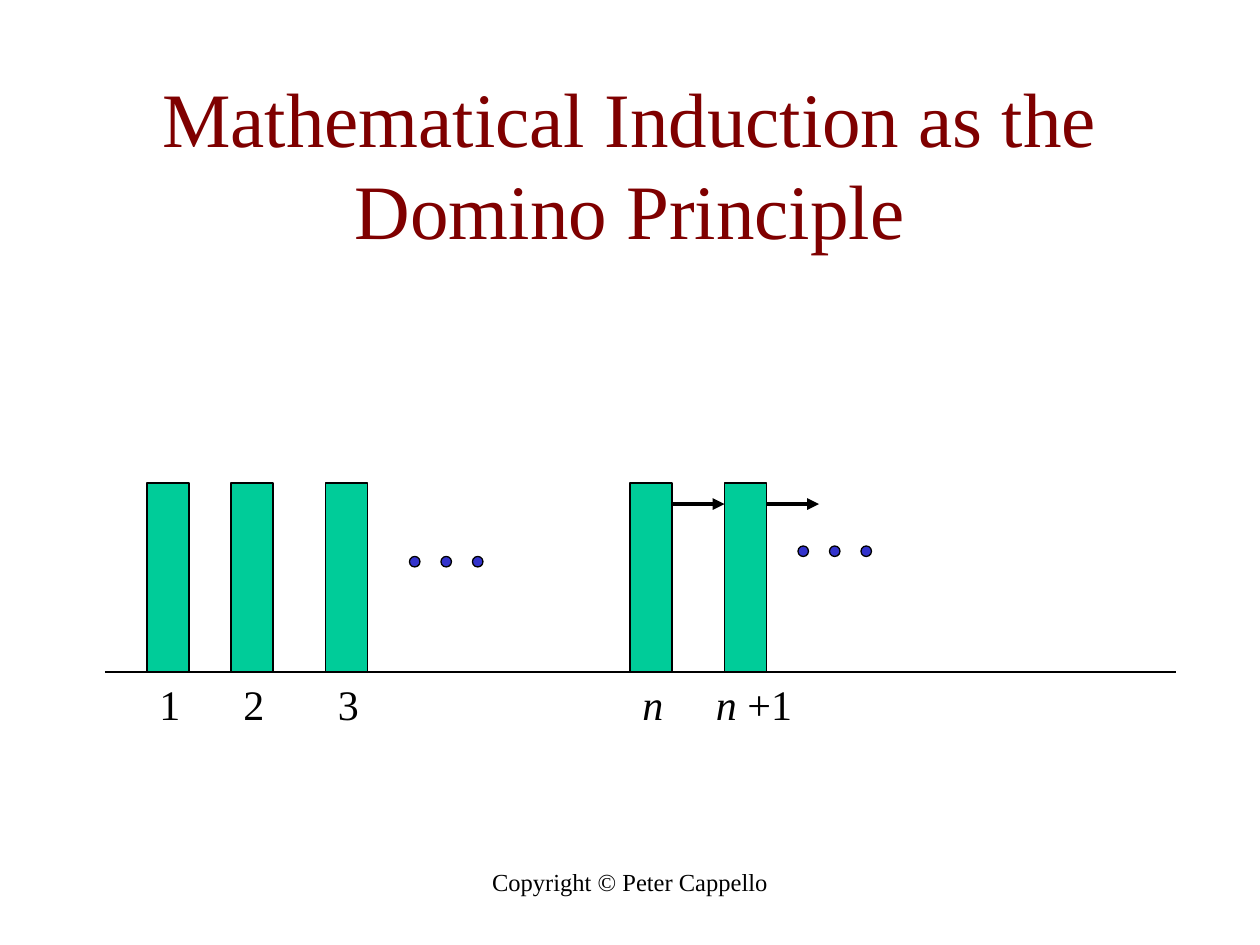
from lxml import etree
from pptx import Presentation
from pptx.dml.color import RGBColor
from pptx.enum.shapes import MSO_CONNECTOR, MSO_SHAPE
from pptx.enum.text import MSO_ANCHOR, MSO_AUTO_SIZE, PP_ALIGN
from pptx.oxml.ns import qn
from pptx.util import Pt

RECTANGLE, OVAL = MSO_SHAPE.RECTANGLE, MSO_SHAPE.OVAL
STRAIGHT = MSO_CONNECTOR.STRAIGHT
TOP, MIDDLE = MSO_ANCHOR.TOP, MSO_ANCHOR.MIDDLE
LEFT, CENTER = PP_ALIGN.LEFT, PP_ALIGN.CENTER
FIT_SHAPE = MSO_AUTO_SIZE.SHAPE_TO_FIT_TEXT

BLACK = RGBColor(0x00, 0x00, 0x00)
MAROON = RGBColor(0x7F, 0x00, 0x00)
GREEN = RGBColor(0x00, 0xCC, 0x99)
BLUE = RGBColor(0x33, 0x33, 0xCC)


class DominoSlide:
    font = "Times New Roman"
    outline = 0.75

    def __init__(self, slide):
        self.shapes = slide.shapes

    def text(self, box, runs, size, color=BLACK, align=CENTER, anchor=TOP, wrap=True):
        """Write one paragraph; runs are (text, italic) pairs."""
        frame = self.shapes.add_textbox(*map(Pt, box)).text_frame
        frame.word_wrap = wrap
        frame.vertical_anchor = anchor
        if not wrap:
            frame.auto_size = FIT_SHAPE
        paragraph = frame.paragraphs[0]
        paragraph.alignment = align
        for words, italic in runs:
            run = paragraph.add_run()
            run.text = words
            run.font.color.rgb = color
            style = {"name": self.font, "size": Pt(size), "italic": italic}
            for key, value in style.items():
                setattr(run.font, key, value)

    def solid(self, kind, box, fill):
        shape = self.shapes.add_shape(kind, *map(Pt, box))
        shape.shadow.inherit = False
        shape.fill.solid()
        shape.fill.fore_color.rgb = fill
        shape.line.color.rgb = BLACK
        shape.line.width = Pt(self.outline)

    def line(self, start, end, width, arrow=False):
        connector = self.shapes.add_connector(STRAIGHT, *map(Pt, (*start, *end)))
        connector.line.color.rgb = BLACK
        connector.line.width = Pt(width)
        if arrow:
            outline = connector.line._get_or_add_ln()
            etree.SubElement(outline, qn("a:tailEnd"), type="triangle")
        etree.SubElement(connector._element.spPr, qn("a:effectLst"))

    def ellipsis(self, left, top, size=6, step=18):
        for i in range(3):
            self.solid(OVAL, (left + i * step, top, size, size), BLUE)


def main():
    prs = Presentation()
    prs.slide_width, prs.slide_height = Pt(720), Pt(540)
    page = DominoSlide(prs.slides.add_slide(prs.slide_layouts[6]))

    # Footer and title
    page.text((246, 492, 228, 36), [("Copyright © Peter Cappello", False)], 14)
    page.text((54, 48, 612, 90), [("Mathematical Induction as the Domino Principle", False)],
              44, MAROON, anchor=MIDDLE)

    # Ground
    ground = 384
    page.line((60, ground), (672, ground), page.outline)

    # Dominoes
    domino_width, domino_height = 24, 108
    dominoes = [84, 132, 186, 360, 414]
    for left in dominoes:
        page.solid(RECTANGLE, (left, ground - domino_height, domino_width, domino_height), GREEN)

    # Domino numbers; the last one is wider and starts further left
    numbers = [[("1", False)], [("2", False)], [("3", False)],
               [("n", True)], [("n ", True), ("+1", False)]]
    for left, number in zip(dominoes[:-1] + [402], numbers):
        width = 26.5 if len(number) == 1 else 58.5
        page.text((left, ground, width, 36), number, 24, align=LEFT, wrap=False)

    # Pushes from n to n+1 and onwards
    push_y, push_length = 288, 30
    for left in dominoes[-2:]:
        start = left + domino_width
        page.line((start, push_y), (start + push_length, push_y), 2.25, arrow=True)

    # Dots for the dominoes left out
    page.ellipsis(234, 318)
    page.ellipsis(456, 312)

    prs.save("out.pptx")


if __name__ == "__main__":
    main()
